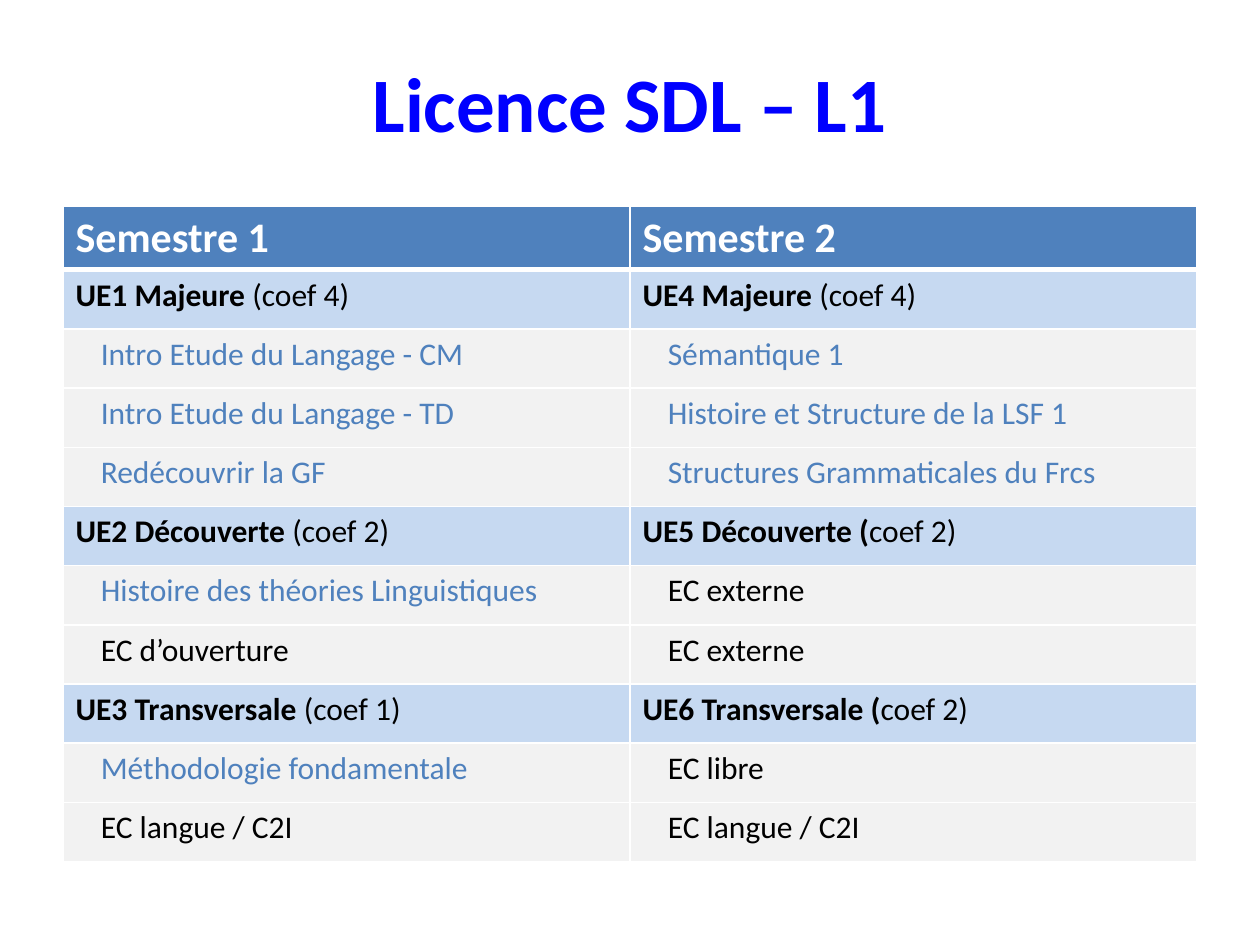
from lxml import etree
from pptx import Presentation
from pptx import util as u
from pptx.dml.color import RGBColor
from pptx.enum import text
from pptx.oxml.ns import qn

ROWS = [
    ("Semestre 1", "Semestre 2"),
    ("UE1 Majeure |(coef 4)", "UE4 Majeure |(coef 4)"),
    ("Intro Etude du Langage - CM", "Sémantique 1"),
    ("Intro Etude du Langage - TD", "Histoire et Structure de la LSF 1"),
    ("Redécouvrir la GF", "Structures Grammaticales du Frcs"),
    ("UE2 Découverte |(coef 2)", "UE5 Découverte (|coef 2)"),
    ("Histoire des théories Linguistiques", "EC externe"),
    ("EC d’ouverture", "EC externe"),
    ("UE3 Transversale |(coef 1)", "UE6 Transversale (|coef 2)"),
    ("Méthodologie fondamentale", "EC libre"),
    ("EC langue / C2I", "EC langue / C2I"),
]


def colour(value):
    return RGBColor.from_string(value)


class CourseSlide:
    """Style of the course overview and the slide it is drawn on."""

    font = "Calibri"
    blue, white, black = "4F81BD", "FFFFFF", "000000"
    title_blue, unit_fill, course_fill = "0000FF", "C6D9F1", "F2F2F2"

    def __init__(self, presentation):
        self.slide = presentation.slides.add_slide(presentation.slide_layouts[6])

    def run(self, paragraph, words, size, hue, bold=False):
        run = paragraph.add_run()
        run.text = words
        formats = {"name": self.font, "size": u.Pt(size), "bold": bold}
        for name, value in formats.items():
            setattr(run.font, name, value)
        run.font.color.rgb = colour(hue)

    def title(self, words, left, top, width, height):
        box = self.slide.shapes.add_textbox(*map(u.Inches, (left, top, width, height)))
        formats = {"word_wrap": True, "vertical_anchor": text.MSO_ANCHOR.MIDDLE}
        for name, value in formats.items():
            setattr(box.text_frame, name, value)
        paragraph = box.text_frame.paragraphs[0]
        paragraph.alignment = text.PP_ALIGN.CENTER
        self.run(paragraph, words, 44, self.title_blue, True)

    def borders(self, cell, widths):
        properties = cell._tc.get_or_add_tcPr()
        for side, width in widths.items():
            line = etree.SubElement(properties, qn(f"a:ln{side}"), w=str(u.Pt(width)))
            fill = etree.SubElement(line, qn("a:solidFill"))
            etree.SubElement(fill, qn("a:srgbClr"), val=self.white)

    def cell(self, cell, words, row):
        paragraph = cell.text_frame.paragraphs[0]
        heading, separator, coefficient = words.partition("|")
        if row == 0:
            fill = self.blue
            self.run(paragraph, words, 24, self.white, True)
        elif separator:
            fill = self.unit_fill
            self.run(paragraph, heading, 18, self.black, True)
            self.run(paragraph, coefficient, 18, self.black)
        else:
            fill = self.course_fill
            paragraph._p.get_or_add_pPr().set("marL", str(u.Inches(0.2)))
            hue = self.black if words.startswith("EC ") else self.blue
            self.run(paragraph, words, 18, hue)
        top, bottom = (3 if row == 1 else 1), (3 if row == 0 else 1)
        self.borders(cell, {"L": 1, "R": 1, "T": top, "B": bottom})
        cell.fill.solid()
        cell.fill.fore_color.rgb = colour(fill)

    def table(self, rows, left, top, width, row_height):
        size = map(u.Inches, (left, top, width, row_height * len(rows)))
        table = self.slide.shapes.add_table(len(rows), len(rows[0]), *size).table
        for index, row in enumerate(rows):
            table.rows[index].height = u.Inches(row_height)
            for column, words in enumerate(row):
                self.cell(table.cell(index, column), words, index)


def main():
    presentation = Presentation()
    presentation.slide_width, presentation.slide_height = u.Inches(10), u.Inches(7.5)
    course_slide = CourseSlide(presentation)
    course_slide.title("Licence SDL – L1", 0.5, 0.3, 9, 1.01)
    course_slide.table(ROWS, 0.5, 1.64, 9, 0.47)
    presentation.save("out.pptx")


if __name__ == "__main__":
    main()
